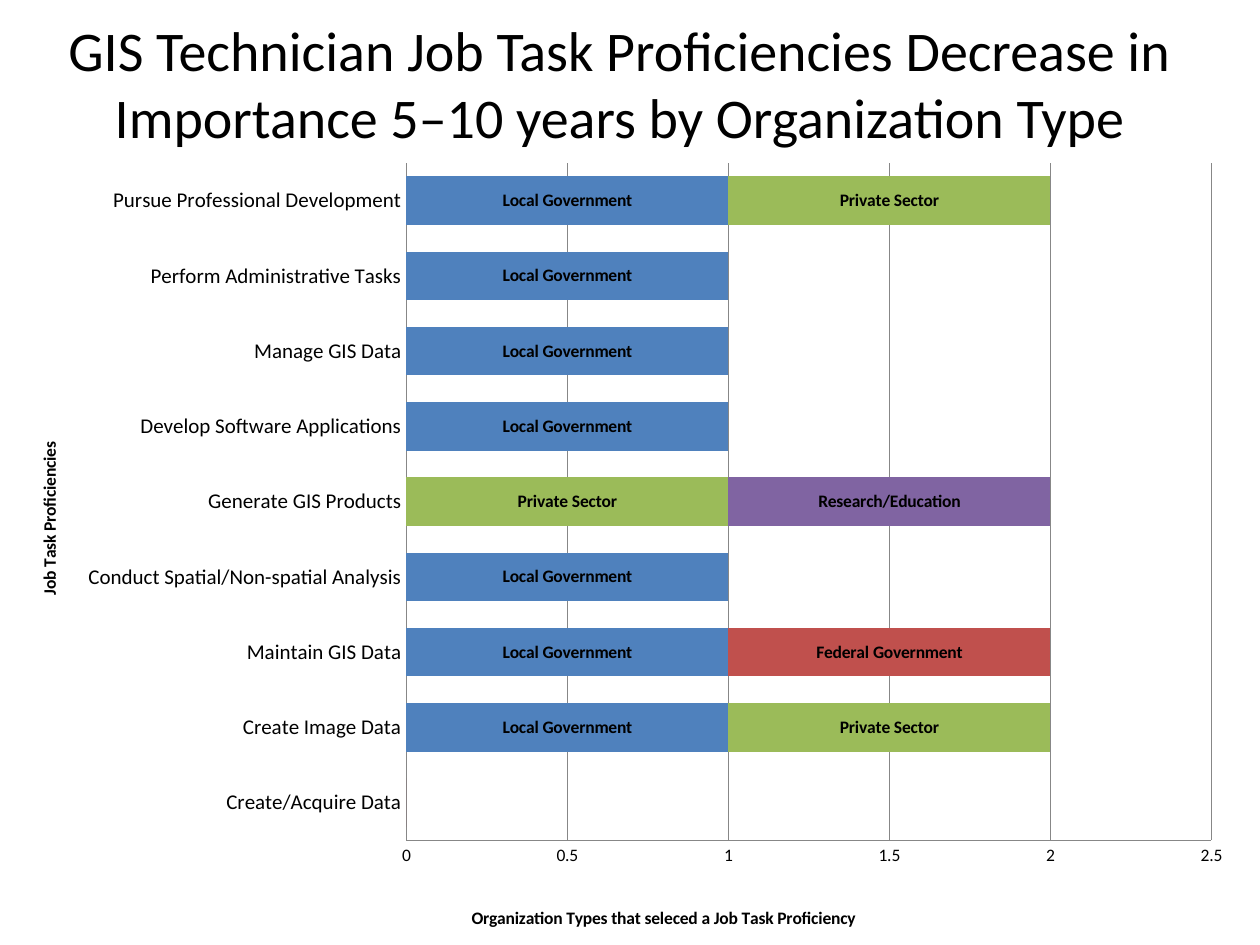
import pptx
import pptx.chart.data
import pptx.dml.color
import pptx.enum.chart
import pptx.enum.text
import pptx.oxml
import pptx.oxml.ns
import pptx.util

Inches, Pt = pptx.util.Inches, pptx.util.Pt
RGBColor = pptx.dml.color.RGBColor
qn = pptx.oxml.ns.qn

FONT = "Calibri"
BLACK = RGBColor(0x00, 0x00, 0x00)
GRAY = RGBColor(0x87, 0x87, 0x87)
BLUE = RGBColor(0x4F, 0x81, 0xBD)
RED = RGBColor(0xC0, 0x50, 0x4D)
GREEN = RGBColor(0x9B, 0xBB, 0x59)
PURPLE = RGBColor(0x80, 0x64, 0xA2)

HEADING = ("GIS Technician Job Task Proficiencies Decrease in "
           "Importance 5–10 years by Organization Type")
TASK_TITLE = "Job Task Proficiencies"
COUNT_TITLE = "Organization Types that seleced a Job Task Proficiency"
TASKS = [
    "Create/Acquire Data",
    "Create Image Data",
    "Maintain GIS Data",
    "Conduct Spatial/Non-spatial Analysis",
    "Generate GIS Products",
    "Develop Software Applications",
    "Manage GIS Data",
    "Perform Administrative Tasks",
    "Pursue Professional Development",
]
ORGANIZATIONS = [
    ("Local Government", BLUE, [0, 1, 1, 1, 0, 1, 1, 1, 1]),
    ("Federal Government", RED, [0, 0, 1, 0, 0, 0, 0, 0, 0]),
    ("Private Sector", GREEN, [0, 1, 0, 0, 1, 0, 0, 0, 1]),
    ("Research/Education", PURPLE, [0, 0, 0, 0, 1, 0, 0, 0, 0]),
]


def style(font, size=10, bold=False):
    font.name, font.size, font.bold = FONT, Pt(size), bold
    font.color.rgb = BLACK


def write(text_frame, text, align=pptx.enum.text.PP_ALIGN.CENTER, **font_format):
    paragraph = text_frame.paragraphs[0]
    paragraph.alignment = align
    run = paragraph.add_run()
    run.text = text
    style(run.font, **font_format)


def chart_xml(body):
    return pptx.oxml.parse_xml(body.replace(
        ">", f" {pptx.oxml.ns.nsdecls('c')}>", 1))


def place(parent, index, inner=False, **fractions):
    """Give a chart part a manual layout in fractions of the chart."""
    for old in parent.findall(qn("c:layout")):
        parent.remove(old)
    settings = '<c:layoutTarget val="inner"/>' if inner else ""
    settings += '<c:xMode val="edge"/><c:yMode val="edge"/>'
    settings += "".join(f'<c:{key} val="{value}"/>' for key, value in fractions.items())
    parent.insert(index, chart_xml(
        f"<c:layout><c:manualLayout>{settings}</c:manualLayout></c:layout>"))


def format_axis(axis, title, size, x, y):
    axis.has_title = True
    write(axis.axis_title.text_frame, title, bold=True)
    place(axis.axis_title._element, 1, x=x, y=y)
    axis.major_tick_mark = axis.minor_tick_mark = pptx.enum.chart.XL_TICK_MARK.NONE
    style(axis.tick_labels.font, size=size)
    axis.format.line.color.rgb = GRAY
    axis.format.line.width = Pt(0.75)


def label_bars(series, values):
    """Show the series name on each bar, and nothing where the value is zero."""
    labels = series.data_labels
    labels.show_value = False
    labels.show_series_name = True
    labels.position = pptx.enum.chart.XL_LABEL_POSITION.CENTER
    style(labels.font, bold=True)
    zeros = [index for index, value in enumerate(values) if value == 0]
    for position, index in enumerate(zeros):
        labels._element.insert(position, chart_xml(
            f'<c:dLbl><c:idx val="{index}"/><c:delete val="1"/></c:dLbl>'))


def add_task_chart(slide):
    data = pptx.chart.data.CategoryChartData()
    data.categories = TASKS
    for name, _, values in ORGANIZATIONS:
        data.add_series(name, values)
    chart = slide.shapes.add_chart(
        pptx.enum.chart.XL_CHART_TYPE.BAR_STACKED,
        Inches(0.08), Inches(1.17), Inches(9.83), Inches(6.25), data).chart
    chart.has_legend = chart.has_title = False
    style(chart.font)
    place(chart._chartSpace.chart.plotArea, 0, inner=True,
          x=0.32, y=0.02, w=0.65, h=0.86)

    plot = chart.plots[0]
    plot.gap_width, plot.overlap = 55, 100
    plot.vary_by_categories = False
    for series, (_, color, values) in zip(plot.series, ORGANIZATIONS):
        series.format.fill.solid()
        series.format.fill.fore_color.rgb = color
        label_bars(series, values)

    tasks, counts = chart.category_axis, chart.value_axis
    format_axis(tasks, TASK_TITLE, size=12, x=0.02, y=0.37)
    tasks.axis_title.text_frame._txBody.bodyPr.set("rot", "-5400000")
    tasks.axis_title.text_frame._txBody.bodyPr.set("vert", "horz")
    format_axis(counts, COUNT_TITLE, size=10, x=0.37, y=0.96)
    counts.minimum_scale, counts.maximum_scale, counts.major_unit = 0, 2.5, 0.5
    counts.tick_labels.number_format = "General"
    counts.tick_labels.number_format_is_linked = False
    counts.has_major_gridlines = True
    counts.major_gridlines.format.line.color.rgb = GRAY
    counts.major_gridlines.format.line.width = Pt(0.75)


def main():
    deck = pptx.Presentation()
    deck.slide_width, deck.slide_height = Inches(10), Inches(7.5)
    slide = deck.slides.add_slide(deck.slide_layouts[5])
    heading = slide.shapes.title
    heading.left, heading.top = Inches(0.42), Inches(0.03)
    heading.width, heading.height = Inches(9), Inches(1.25)
    heading.text_frame.vertical_anchor = pptx.enum.text.MSO_ANCHOR.MIDDLE
    write(heading.text_frame, HEADING, size=32)
    add_task_chart(slide)
    deck.save("out.pptx")


if __name__ == "__main__":
    main()
